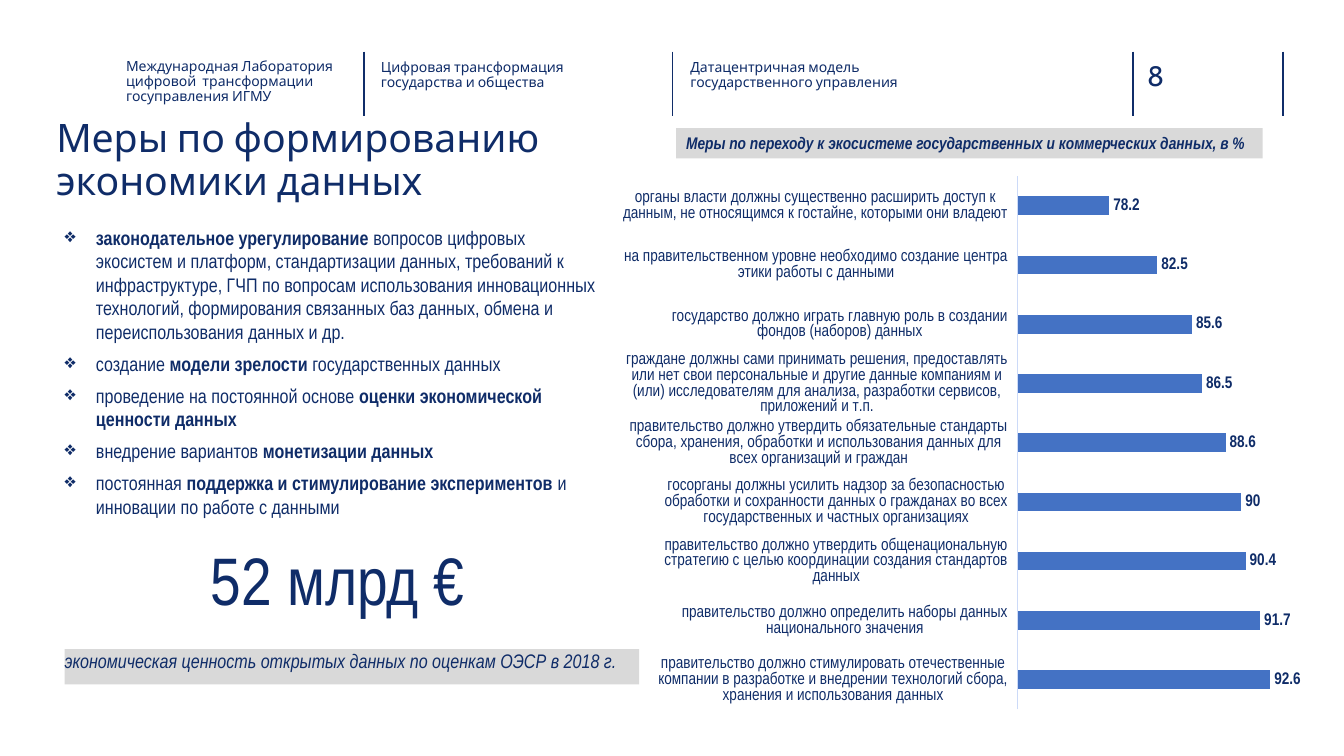
from lxml import etree
from pptx import Presentation
from pptx.chart.data import CategoryChartData
from pptx.dml.color import RGBColor
from pptx.enum.chart import XL_CHART_TYPE, XL_LABEL_POSITION, XL_TICK_LABEL_POSITION, XL_TICK_MARK
from pptx.enum.shapes import MSO_CONNECTOR, MSO_SHAPE
from pptx.enum.text import MSO_ANCHOR, PP_ALIGN
from pptx.oxml import parse_xml
from pptx.oxml.ns import nsdecls, qn
from pptx.util import Cm, Pt

BAR = XL_CHART_TYPE.BAR_CLUSTERED
OUTSIDE_END = XL_LABEL_POSITION.OUTSIDE_END
LABELS_LOW = XL_TICK_LABEL_POSITION.LOW
NO_TICK = XL_TICK_MARK.NONE
STRAIGHT = MSO_CONNECTOR.STRAIGHT
RECT = MSO_SHAPE.RECTANGLE
TOP, MIDDLE = MSO_ANCHOR.TOP, MSO_ANCHOR.MIDDLE
LEFT = PP_ALIGN.LEFT

NAVY = RGBColor(0x0F, 0x2C, 0x68)
RULE = RGBColor(0x10, 0x2D, 0x69)
GREY = RGBColor(0xD9, 0xD9, 0xD9)
BLUE = RGBColor(0x44, 0x72, 0xC4)
AXIS = RGBColor(0xCC, 0xDA, 0xF8)
HEAD_FONT, BODY_FONT = "Cabin", "Arial Narrow"

# Positions are left, top, width, height in centimetres
RULE_XS = [9.17, 16.94, 28.55, 32.33]
RULE_TOP, RULE_BOTTOM = 1.3, 2.92
HEADERS = [
    ("Международная Лаборатория цифровой  трансформации госуправления ИГМУ", (3.18, 1.5, 5.28, 1.14)),
    ("Цифровая трансформация государства и общества", (9.6, 1.52, 5.74, 1.14)),
    ("Датацентричная модель государственного управления", (17.4, 1.52, 5.74, 1.14)),
]
PAGE_NUMBER = ("8", (28.91, 1.47, 1.85, 0.86))
TITLE = ("Меры по формированию экономики данных", (1.42, 3, 15.49, 2.16))
AMOUNT = ("52 млрд €", (5.31, 13.79, 7.67, 2.06))
CHART_TITLE = ("Меры по переходу к экосистеме государственных и коммерческих данных, в %",
               (17.04, 3.23, 14.78, 0.76))
AMOUNT_NOTE = ("экономическая ценность открытых данных по оценкам ОЭСР в 2018 г.",
               (1.63, 16.36, 14.48, 0.89))
MEASURES_BOX = (1.63, 5.69, 13.39, 7.85)
# Each measure is a list of (text, bold)
MEASURES = [
    [("законодательное урегулирование ", True),
     ("вопросов цифровых экосистем и платформ, стандартизации данных, требований к "
      "инфраструктуре, ГЧП по вопросам использования инновационных технологий, "
      "формирования связанных баз данных, обмена и переиспользования данных и др.", False)],
    [("создание ", False), ("модели зрелости ", True), ("государственных данных", False)],
    [("проведение на постоянной основе ", False), ("оценки экономической ценности данных", True)],
    [("внедрение вариантов ", False), ("монетизации данных", True)],
    [("постоянная ", False), ("поддержка и стимулирование экспериментов ", True),
     ("и инновации по работе с данными", False)],
]
CHART_BOX = (15.7, 4.04, 17.37, 14.25)
PLOT = {"x": 0.567, "y": 0.028, "w": 0.411, "h": 0.943}
SUPPORT = [  # from the bottom bar to the top one
    ("правительство должно стимулировать отечественные компании в разработке и внедрении "
     "технологий сбора, хранения и использования данных", 92.6),
    ("правительство должно определить наборы данных национального значения", 91.7),
    ("правительство должно утвердить общенациональную стратегию с целью координации "
     "создания стандартов данных", 90.4),
    ("госорганы должны усилить надзор за безопасностью обработки и сохранности данных "
     "о гражданах во всех государственных и частных организациях", 90),
    ("правительство должно утвердить обязательные стандарты сбора, хранения, обработки "
     "и использования данных для всех организаций и граждан", 88.6),
    ("граждане должны сами принимать решения, предоставлять или нет свои персональные и "
     "другие данные компаниям и (или) исследователям для анализа, разработки сервисов, "
     "приложений и т.п.", 86.5),
    ("государство должно играть главную роль в создании фондов (наборов) данных", 85.6),
    ("на правительственном уровне необходимо создание центра этики работы с данными", 82.5),
    ("органы власти должны существенно расширить доступ к данным, не относящимся "
     "к гостайне, которыми они владеют", 78.2),
]


def style(font, size, name=BODY_FONT, bold=False, italic=False):
    font.size, font.name, font.bold, font.italic = Pt(size), name, bold, italic
    font.color.rgb = NAVY


def prepare(sp, anchor=TOP, inset=0):
    tf = sp.text_frame
    tf.word_wrap, tf.vertical_anchor = True, anchor
    tf.margin_left = tf.margin_right = Cm(inset)
    tf.margin_top = tf.margin_bottom = Cm(inset / 2)
    return tf


def write(tf, text, size, name=BODY_FONT, spacing=None, **look):
    tf.text = text
    p = tf.paragraphs[0]
    p.alignment = LEFT
    if spacing:
        p.line_spacing = spacing
    style(p.runs[0].font, size, name, **look)


def add_text(slide, item, size, name=BODY_FONT, spacing=None):
    text, box = item
    sp = slide.shapes.add_textbox(*map(Cm, box))
    write(prepare(sp), text, size, name, spacing)


def add_strip(slide, item, size, anchor, inset, **look):
    text, box = item
    sp = slide.shapes.add_shape(RECT, *map(Cm, box))
    sp.shadow.inherit = False
    sp.fill.solid()
    sp.fill.fore_color.rgb = GREY
    sp.line.fill.background()
    write(prepare(sp, anchor, inset), text, size, **look)


def add_rule(slide, x):
    line = slide.shapes.add_connector(STRAIGHT, Cm(x), Cm(RULE_TOP), Cm(x), Cm(RULE_BOTTOM))
    line.line.color.rgb = RULE
    line.line.width = Pt(1)
    etree.SubElement(line._element.spPr, qn("a:effectLst"))


def add_measures(slide):
    tf = prepare(slide.shapes.add_textbox(*map(Cm, MEASURES_BOX)))
    for i, parts in enumerate(MEASURES):
        p = tf.add_paragraph() if i else tf.paragraphs[0]
        pPr = p._p.get_or_add_pPr()
        pPr.set("marL", str(Cm(0.79)))
        pPr.set("indent", str(-Cm(0.79)))
        etree.SubElement(pPr, qn("a:buChar"), char="❖")
        p.space_before = Pt(6 if i else 0)
        for text, bold in parts:
            r = p.add_run()
            r.text = text
            style(r.font, 14, bold=bold)


def add_support_chart(slide):
    data = CategoryChartData()
    data.categories = [name for name, _ in SUPPORT]
    data.add_series("Series 1", [value for _, value in SUPPORT])
    chart = slide.shapes.add_chart(BAR, *map(Cm, CHART_BOX), data).chart
    chart.has_legend = chart.has_title = False
    style(chart.font, 10, "Calibri")

    cat = chart.category_axis
    cat.major_tick_mark = cat.minor_tick_mark = NO_TICK
    cat.tick_label_position = LABELS_LOW
    cat.format.line.color.rgb = AXIS
    cat.format.line.width = Pt(0.75)
    style(cat.tick_labels.font, 12)
    val = chart.value_axis
    val.minimum_scale, val.maximum_scale = 70, 95
    val.has_major_gridlines = val.visible = False

    plot = chart.plots[0]
    plot.gap_width, plot.vary_by_categories = 219, False
    fill = plot.series[0].format.fill
    fill.solid()
    fill.fore_color.rgb = BLUE
    labels = plot.series[0].data_labels
    labels.show_value, labels.position = True, OUTSIDE_END
    style(labels.font, 12, bold=True)

    sizes = "".join(f'<c:{k} val="{v}"/>' for k, v in PLOT.items())
    layout = parse_xml(
        f'<c:layout {nsdecls("c")}><c:manualLayout><c:layoutTarget val="inner"/>'
        f'<c:xMode val="edge"/><c:yMode val="edge"/>{sizes}</c:manualLayout></c:layout>')
    area = chart._chartSpace.chart.plotArea
    for old in area.findall(qn("c:layout")):
        area.remove(old)
    area.insert(0, layout)


def main():
    prs = Presentation()
    prs.slide_width, prs.slide_height = Cm(33.87), Cm(19.05)
    slide = prs.slides.add_slide(prs.slide_layouts[6])
    for x in RULE_XS:
        add_rule(slide, x)
    add_text(slide, PAGE_NUMBER, 20, HEAD_FONT)
    for header in HEADERS:
        add_text(slide, header, 10, HEAD_FONT, 0.9)
    add_text(slide, TITLE, 28, HEAD_FONT, 0.9)
    add_measures(slide)
    add_support_chart(slide)
    add_strip(slide, CHART_TITLE, 12, MIDDLE, 0.25, bold=True, italic=True)
    add_text(slide, AMOUNT, 48, spacing=0.9)
    add_strip(slide, AMOUNT_NOTE, 14, TOP, 0, italic=True)
    prs.save("out.pptx")


if __name__ == "__main__":
    main()
